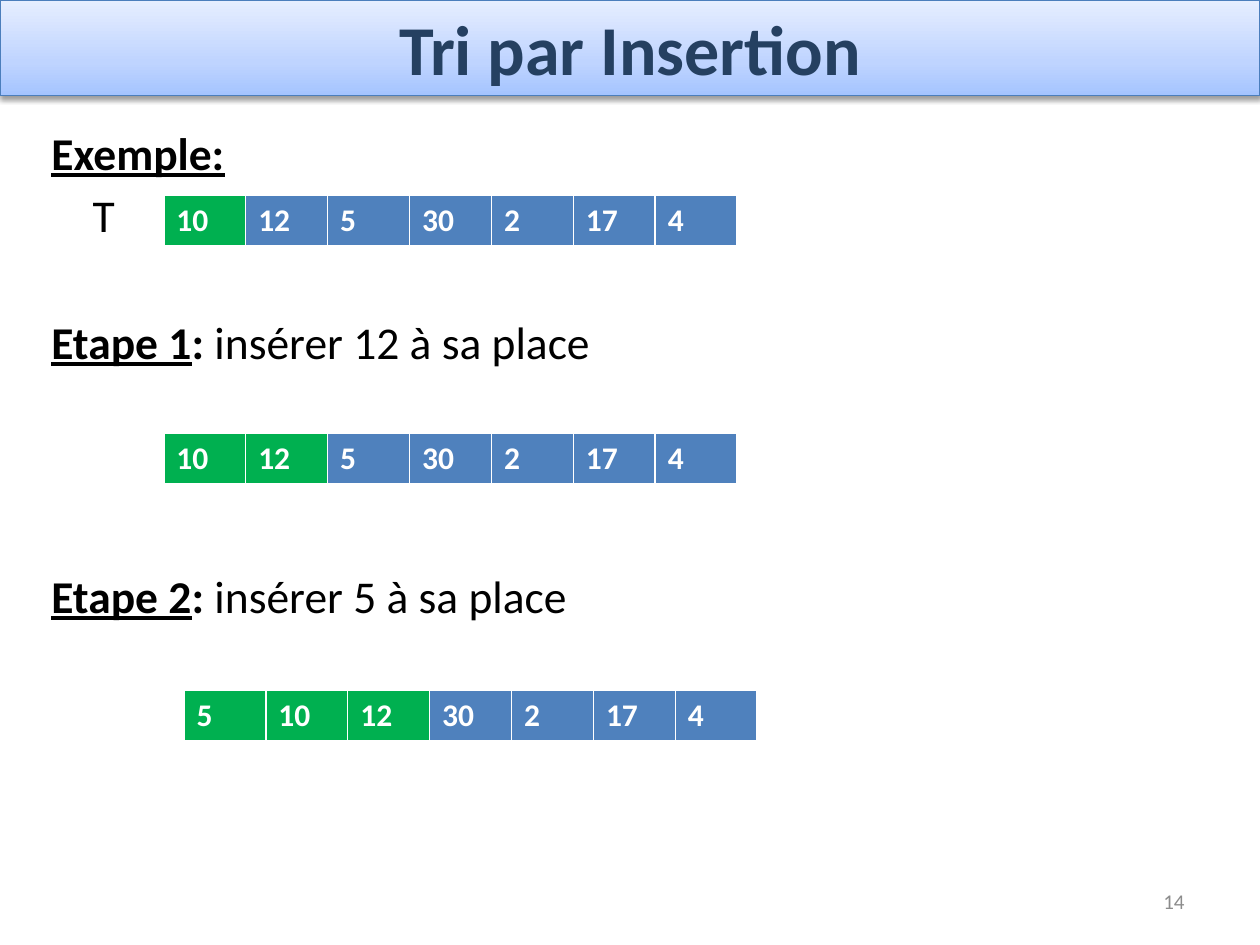
import copy

import lxml.etree
import pptx
import pptx.dml.color
import pptx.enum.text
import pptx.oxml
import pptx.oxml.ns
import pptx.util

COLOURS = {
    "title": "254061",
    "text": "000000",
    "number": "8C8C8C",
    "white": "FFFFFF",
    "sorted": "00B050",
    "unsorted": "4F81BD",
    "outline": "4B7EBC",
}
TITLE_GRADIENT = [(0, "A4C4FF"), (0.35, "BFD4FF"), (1, "E6EEFF")]
BORDERS = {"a:lnL": 1, "a:lnR": 1, "a:lnT": 1, "a:lnB": 3}
NAMESPACE = pptx.oxml.ns.nsdecls("a")
ALIGN = pptx.enum.text.PP_ALIGN
MIDDLE = pptx.enum.text.MSO_ANCHOR.MIDDLE

HEADING = {"bold": True, "underline": True}
STRONG = {"bold": True}
LINES = [
    (0, 0, [("Exemple:", HEADING)]),
    (4.7, 23.5, [("T", {})]),
    (41.1, 0, [("Etape 1", HEADING), (": ", STRONG), ("insérer 12 à sa place", {})]),
    (114, 0, [("Etape 2", HEADING), (": ", STRONG), ("insérer 5 à sa place", {})]),
]
ARRAYS = [
    (93.6, 111.6, [10, 12, 5, 30, 2, 17, 4], 1),
    (93.6, 247.7, [10, 12, 5, 30, 2, 17, 4], 2),
    (105.1, 394.6, [5, 10, 12, 30, 2, 17, 4], 3),
]


def rgb(hex_value):
    return pptx.dml.color.RGBColor.from_string(hex_value)


class SlideBuilder:
    font_name = "Calibri"
    cell_width = 46.8
    cell_height = 29.5

    def __init__(self, deck):
        self.slide = deck.slides.add_slide(deck.slide_layouts[5])

    def format_span(self, span, size, colour, **values):
        values = {"name": self.font_name, "size": pptx.util.Pt(size), **values}
        for key, value in values.items():
            setattr(span.font, key, value)
        span.font.color.rgb = rgb(COLOURS[colour])

    def add_span(self, para, text, size, colour, **values):
        span = para.add_run()
        span.text = text
        self.format_span(span, size, colour, **values)

    def add_title(self, text, width, height):
        title = self.slide.shapes.title
        bounds = {"left": 0, "top": 0, "width": width, "height": height}
        for key, value in bounds.items():
            setattr(title, key, pptx.util.Pt(value))
        title.fill.gradient()
        title.fill.gradient_angle = 90
        stops = title.fill.gradient_stops
        stop_list = title.element.spPr.find(".//" + pptx.oxml.ns.qn("a:gsLst"))
        stop_list.append(copy.deepcopy(stop_list[0]))
        stops = title.fill.gradient_stops
        for stop, (position, colour) in zip(stops, TITLE_GRADIENT):
            stop.position = position
            stop.color.rgb = rgb(colour)
        title.line.color.rgb = rgb(COLOURS["outline"])
        title.line.width = pptx.util.Pt(0.75)
        title.element.spPr.append(pptx.oxml.parse_xml(
            f'<a:effectLst {NAMESPACE}><a:outerShdw blurRad="{pptx.util.Pt(3.1)}" '
            f'dist="{pptx.util.Pt(1.6)}" dir="5400000" rotWithShape="0">'
            '<a:srgbClr val="000000"><a:alpha val="38000"/></a:srgbClr>'
            '</a:outerShdw></a:effectLst>'))
        title.text_frame.vertical_anchor = MIDDLE
        para = title.text_frame.paragraphs[0]
        para.alignment = ALIGN.CENTER
        self.add_span(para, text, 40, "title", bold=True)

    def add_box(self, left, top, width, height):
        bounds = map(pptx.util.Pt, (left, top, width, height))
        frame = self.slide.shapes.add_textbox(*bounds).text_frame
        frame.word_wrap = True
        return frame

    def add_lines(self, lines, *bounds):
        frame = self.add_box(*bounds)
        for index, (space, indent, spans) in enumerate(lines):
            para = frame.add_paragraph() if index else frame.paragraphs[0]
            para.space_before = pptx.util.Pt(space)
            if indent:
                properties = para._p.get_or_add_pPr()
                properties.set("marL", str(pptx.util.Pt(indent)))
            for text, values in spans:
                self.add_span(para, text, 26, "text", **values)

    def add_page_number(self, text, *bounds):
        frame = self.add_box(*bounds)
        frame.vertical_anchor = MIDDLE
        para = frame.paragraphs[0]
        para.alignment = ALIGN.RIGHT
        self.add_span(para, text, 12, "number")

    def add_borders(self, cell):
        properties = cell._tc.get_or_add_tcPr()
        for index, (tag, width) in enumerate(BORDERS.items()):
            line = lxml.etree.Element(
                pptx.oxml.ns.qn(tag), w=str(pptx.util.Pt(width)))
            fill = lxml.etree.SubElement(line, pptx.oxml.ns.qn("a:solidFill"))
            lxml.etree.SubElement(
                fill, pptx.oxml.ns.qn("a:srgbClr"), val=COLOURS["white"])
            properties.insert(index, line)

    def add_array(self, left, top, values, sorted_count):
        bounds = (left, top, self.cell_width * len(values), self.cell_height)
        table = self.slide.shapes.add_table(
            1, len(values), *map(pptx.util.Pt, bounds)).table
        table.horz_banding = False
        for index, value in enumerate(values):
            table.columns[index].width = pptx.util.Pt(self.cell_width)
            cell = table.cell(0, index)
            colour = "sorted" if index < sorted_count else "unsorted"
            cell.fill.solid()
            cell.fill.fore_color.rgb = rgb(COLOURS[colour])
            self.add_borders(cell)
            para = cell.text_frame.paragraphs[0]
            self.add_span(para, str(value), 18, "white", bold=True)


def main():
    deck = pptx.Presentation()
    deck.slide_width = pptx.util.Pt(720)
    deck.slide_height = pptx.util.Pt(540)
    page = SlideBuilder(deck)
    page.add_title("Tri par Insertion", 720, 54.7)
    page.add_lines(LINES, 22.3, 67.7, 675.4, 438.5)
    page.add_page_number("14", 516, 500.5, 168, 28.75)
    for array in ARRAYS:
        page.add_array(*array)
    deck.save("out.pptx")


if __name__ == "__main__":
    main()
